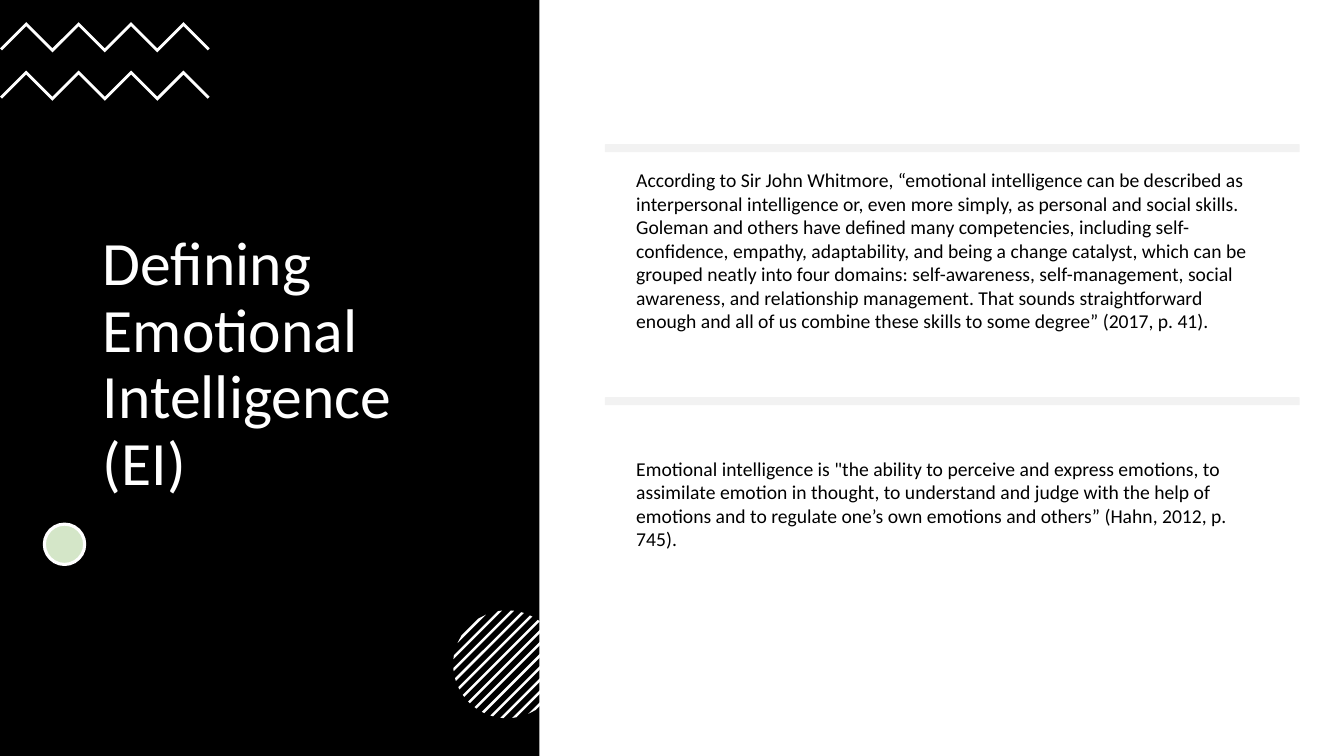
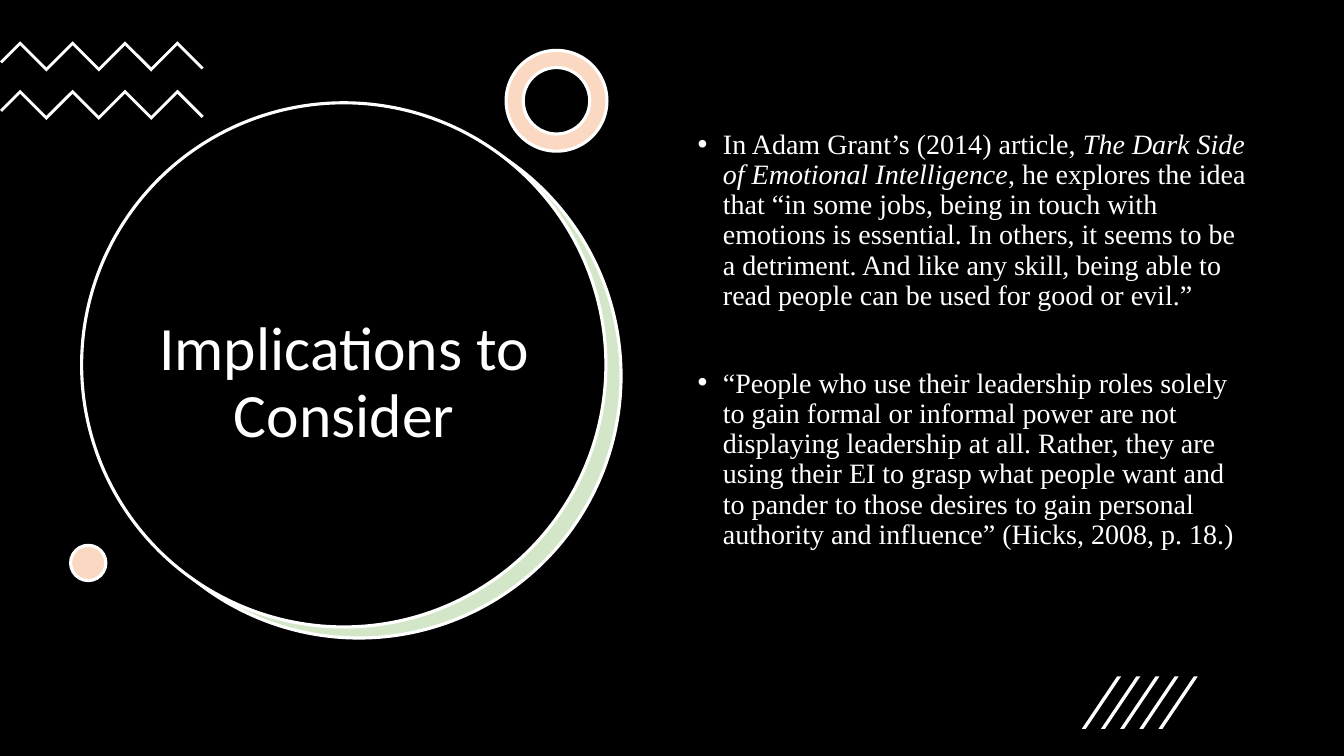
from dataclasses import dataclass
from math import sqrt

from pptx import Presentation
from pptx.dml.color import RGBColor
from pptx.enum.shapes import MSO_SHAPE
from pptx.enum.text import MSO_ANCHOR, MSO_AUTO_SIZE, PP_ALIGN
from pptx.util import Pt

RECT, ROUND = MSO_SHAPE.RECTANGLE, MSO_SHAPE.ROUNDED_RECTANGLE
OVAL, DONUT = MSO_SHAPE.OVAL, MSO_SHAPE.DONUT
LEFT, CENTER = PP_ALIGN.LEFT, PP_ALIGN.CENTER
MIDDLE, NO_FIT = MSO_ANCHOR.MIDDLE, MSO_AUTO_SIZE.NONE
PX = 9144  # 100 px to the inch


@dataclass(frozen=True)
class Theme:
    black: RGBColor = RGBColor(0x00, 0x00, 0x00)
    white: RGBColor = RGBColor(0xFF, 0xFF, 0xFF)
    gray: RGBColor = RGBColor(0xF2, 0xF2, 0xF2)
    green: RGBColor = RGBColor(0xD4, 0xE6, 0xC8)
    peach: RGBColor = RGBColor(0xFA, 0xD8, 0xC1)
    sans: str = "Calibri"
    serif: str = "Times New Roman"
    head: int = 44
    list: int = 20
    card: int = 14
    line: float = 2.25


theme = Theme()


def draw(shapes, kind, box, fill, line=None):
    """Add a flat preset shape."""
    shape = shapes.add_shape(kind, *[n * PX for n in box])
    shape.shadow.inherit = False
    shape.fill.solid()
    shape.fill.fore_color.rgb = fill
    if line is None:
        shape.line.fill.background()
    else:
        shape.line.color.rgb = line
        shape.line.width = Pt(theme.line)
    return shape


def trace(shapes, points):
    """Add a white outline closed through the points."""
    dots = [(round(x * PX), round(y * PX)) for x, y in points]
    path = shapes.build_freeform(*dots[0])
    path.add_line_segments(dots[1:], close=True)
    shape = path.convert_to_shape()
    shape.shadow.inherit = False
    shape.fill.solid()
    shape.fill.fore_color.rgb = theme.white
    shape.line.fill.background()


deck = Presentation()
deck.slide_width, deck.slide_height = 1333 * PX, 750 * PX
define = deck.slides.add_slide(deck.slide_layouts[5])
imply = deck.slides.add_slide(deck.slide_layouts[1])
styles = []  # frame, font, size, color

# Black panels
draw(define.shapes, RECT, (0, 0, 535, 750), theme.black)
draw(imply.shapes, RECT, (0, 0, 1333, 750), theme.black)

# Big disc with its green crescent
draw(imply.shapes, OVAL, (96, 113, 520, 520), theme.green, theme.white)
draw(imply.shapes, OVAL, (81, 102, 520, 520), theme.black, theme.white)

# Zigzag pairs: 26 px up and down, 4 px thick
for slide, first, top, knots in (
    (define, 26, 22, list(range(0, 209, 26))),
    (imply, 20, 41, [0, *range(20, 203, 26)]),
):
    group = slide.shapes.add_group_shape()
    for peak in (top, top + 48):
        under = [knots[0] + 2, *knots[1:-1], knots[-1] - 2]
        edges = [(x, 0) for x in knots] + [(x, 4) for x in under[::-1]]
        trace(group.shapes, [
            (x, peak + abs((x - first + 26) % 52 - 26) + drop)
            for x, drop in edges
        ])

# Dots and ring
draw(define.shapes, OVAL, (44, 520, 40, 40), theme.green, theme.white)
draw(imply.shapes, OVAL, (70, 541, 35, 35), theme.peach, theme.white)
ring = draw(imply.shapes, DONUT, (502, 50, 100, 100), theme.peach, theme.white)
ring.adjustments[0] = 0.17

# Striped circle: 13 chords, each cut off by the rim
group = define.shapes.add_group_shape()
mid_x, mid_y, radius = 503, 659, 53.5
for step in range(-6, 7):
    chord = []
    for edge, sides in ((-1.75, (1, -1)), (1.75, (-1, 1))):
        shift = (12 * step + edge) / 2
        half = sqrt(radius ** 2 / 2 - shift ** 2)
        chord += [(mid_x + shift + s * half, mid_y + shift - s * half)
                  for s in sides]
    trace(group.shapes, chord)

# Slanted strokes
group = imply.shapes.add_group_shape()
for left in range(1073, 1150, 19):
    trace(group.shapes, [(left + 4, 723), (left, 723),
                         (left + 35, 671), (left + 39, 671)])

# Quotes under gray bars
quotes = (
    "According to Sir John Whitmore, “emotional intelligence can be described "
    "as interpersonal intelligence or, even more simply, as personal and "
    "social skills. Goleman and others have defined many competencies, "
    "including self-confidence, empathy, adaptability, and being a change "
    "catalyst, which can be grouped neatly into four domains: self-awareness, "
    "self-management, social awareness, and relationship management. That "
    "sounds straightforward enough and all of us combine these skills to some "
    "degree” (2017, p. 41).",
    "Emotional intelligence is \"the ability to perceive and express emotions, "
    "to assimilate emotion in thought, to understand and judge with the help "
    "of emotions and to regulate one’s own emotions and others” (Hahn, 2012, "
    "p. 745).",
)
for row, quote in enumerate(quotes):
    top = 143 + 251 * row
    bar = draw(define.shapes, ROUND, (600, top, 689, 8), theme.gray)
    bar.adjustments[0] = 0.1
    box = define.shapes.add_textbox(609 * PX, top * PX, 652 * PX, 211 * PX)
    frame = box.text_frame
    frame.word_wrap = True
    frame.vertical_anchor = MIDDLE
    frame.margin_left = frame.margin_right = 22 * PX
    frame.margin_top = frame.margin_bottom = 22 * PX
    frame.text = quote
    styles.append((frame, theme.sans, theme.card, theme.black))

# Titles
for slide, text, spot, align in (
    (define, "Defining Emotional Intelligence (EI)", (92, 131, 350, 463), LEFT),
    (imply, "Implications to Consider", (121, 205, 441, 352), CENTER),
):
    title = slide.shapes.title
    title.left, title.top, title.width, title.height = [n * PX for n in spot]
    frame = title.text_frame
    frame.text = text
    frame.auto_size = NO_FIT
    frame.vertical_anchor = MIDDLE
    frame.paragraphs[0].alignment = align
    frame.paragraphs[0].line_spacing = 0.9
    styles.append((frame, theme.sans, theme.head, theme.white))

# Bullet list; each item is made of runs, every second one italic
items = (
    ("In Adam Grant’s (2014) article, ",
     "The Dark Side of Emotional Intelligence",
     ", he explores the idea that “in some jobs, being in touch with emotions "
     "is essential. In others, it seems to be a detriment. And like any skill, "
     "being able to read people can be used for good or evil.”"),
    ("“People who use their leadership roles solely to gain formal or informal "
     "power are not displaying leadership at all. Rather, they are using their "
     "EI to grasp what people want and to pander to those desires to gain "
     "personal authority and influence” (Hicks, 2008, p. 18.)",),
)
body = imply.placeholders[1]
body.left, body.top, body.width, body.height = [
    n * PX for n in (682, 124, 571, 476)]
frame = body.text_frame
frame.auto_size = NO_FIT
for row, parts in enumerate(items):
    para = frame.add_paragraph() if row else frame.paragraphs[0]
    para.line_spacing = 0.9
    para.space_before = Pt(41 * row)
    props = para._p.get_or_add_pPr()
    props.set("marL", str(25 * PX))
    props.set("indent", str(-25 * PX))
    for spot, part in enumerate(parts):
        run = para.add_run()
        run.text = part
        run.font.italic = spot % 2 == 1
styles.append((frame, theme.serif, theme.list, theme.white))

# Type
for frame, font, size, color in styles:
    for para in frame.paragraphs:
        for run in para.runs:
            run.font.name = font
            run.font.size = Pt(size)
            run.font.color.rgb = color

# Placeholders go in front of the panels
for slide in deck.slides:
    for holder in list(slide.placeholders):
        node = holder.element
        node.getparent().append(node)

deck.save("out.pptx")
